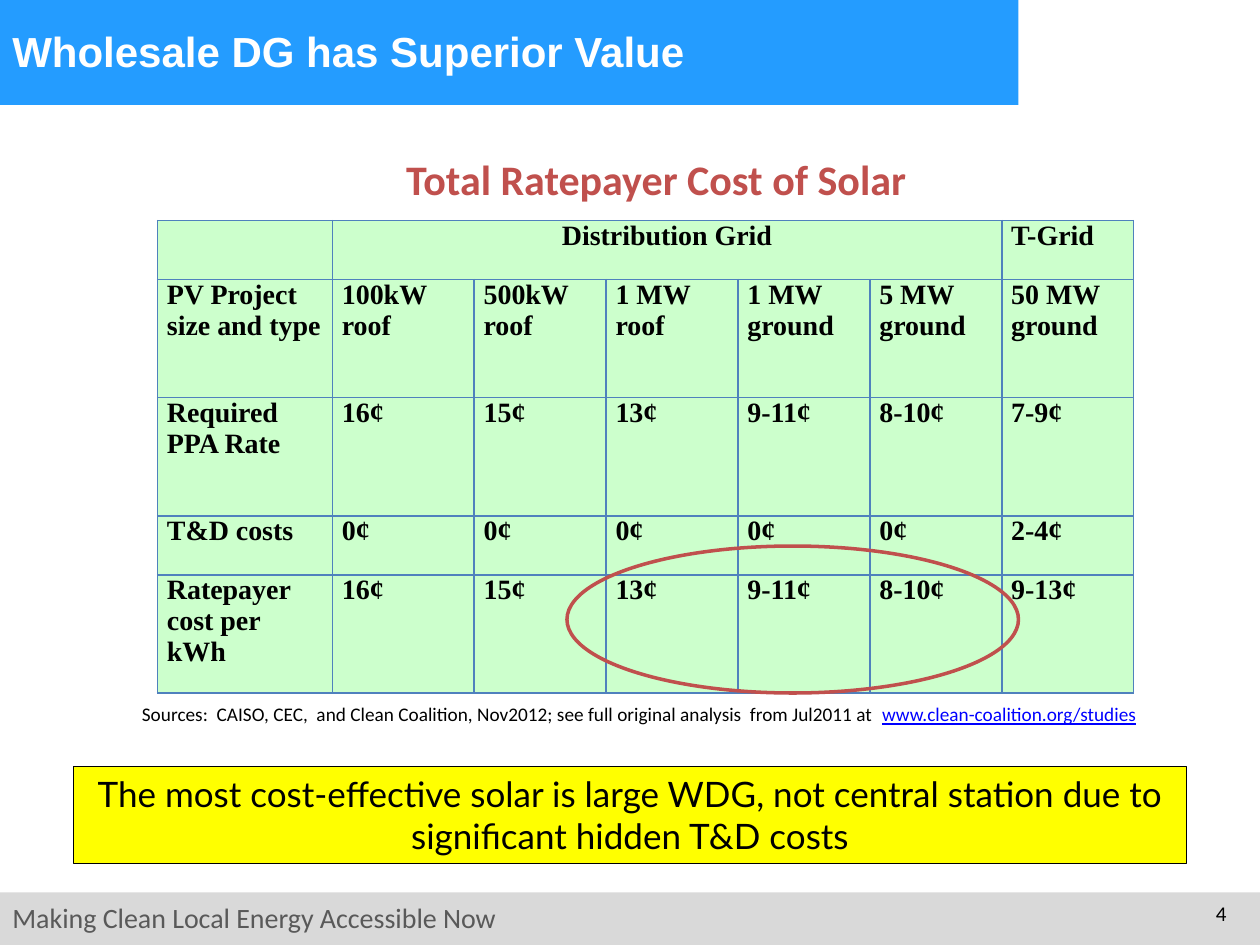
"""Build a slide comparing the total ratepayer cost of solar by project size."""
from dataclasses import dataclass
from typing import NamedTuple, Optional

from lxml.etree import SubElement
from pptx import Presentation
from pptx.dml.color import RGBColor
from pptx.enum.shapes import MSO_SHAPE
from pptx.enum.text import MSO_ANCHOR, PP_ALIGN
from pptx.oxml.ns import qn
from pptx.util import Pt


@dataclass(frozen=True)
class Theme:
    white: str = "FFFFFF"
    black: str = "000000"
    banner: str = "249CFF"
    footer: str = "D9D9D9"
    tagline: str = "595959"
    callout: str = "FFFF00"
    accent: str = "C0504D"
    cell: str = "CCFFCC"
    border: str = "4F81BD"
    link: str = "0000FF"
    heading_size: float = 24
    callout_size: float = 20
    body_size: float = 16
    number_size: float = 12
    source_size: float = 11


class Box(NamedTuple):
    left: float
    top: float
    width: float
    height: float

    def lengths(self) -> list:
        return [Pt(value) for value in self]


class Style(NamedTuple):
    size: float
    color: str
    font: str = "Calibri"
    bold: bool = False
    align: PP_ALIGN = PP_ALIGN.LEFT


class Panel(NamedTuple):
    box: Box
    fill: Optional[str] = None
    line: Optional[str] = None
    weight: float = 0
    outline: MSO_SHAPE = MSO_SHAPE.RECTANGLE


class Label(NamedTuple):
    box: Box
    text: str
    style: Style
    anchor: MSO_ANCHOR = MSO_ANCHOR.TOP


THEME = Theme()
CELL_STYLE = Style(THEME.body_size, THEME.black, "Times New Roman", True)
SOURCE_STYLE = Style(THEME.source_size, THEME.black)
CALLOUT_STYLE = Style(THEME.callout_size, THEME.black, "Lato", align=PP_ALIGN.CENTER)

FOOTER = Panel(Box(0, 510, 720, 30), THEME.footer)
BANNER = Panel(Box(0, 0, 582, 60), THEME.banner)
CALLOUT = Panel(Box(42, 438, 636, 55.4), THEME.callout, THEME.black, 0.75)
HIGHLIGHT = Panel(Box(324, 312, 258, 84), None, THEME.accent, 2, MSO_SHAPE.OVAL)

LABELS = [
    Label(Box(0, 511.2, 372, 26.6), "Making Clean Local Energy Accessible Now",
          Style(THEME.body_size, THEME.tagline)),
    Label(Box(672, 511.2, 36, 28.8), "4",
          Style(THEME.number_size, THEME.black, align=PP_ALIGN.RIGHT)),
    Label(Box(0, 6, 504, 46), "Wholesale DG has Superior Value",
          Style(THEME.heading_size, THEME.white, "Arial", True), MSO_ANCHOR.MIDDLE),
    Label(Box(198, 84, 354, 36.4), "Total Ratepayer Cost of Solar",
          Style(THEME.heading_size, THEME.accent, bold=True, align=PP_ALIGN.CENTER)),
]
CALLOUT_TEXT = ("The most cost-effective solar is large WDG, not central station "
                "due to significant hidden T&D costs")
SOURCES_BOX = Box(74, 398, 632, 34)
SOURCES = ("Sources:  CAISO, CEC,  and Clean Coalition, Nov2012; "
           "see full original analysis  from Jul2011 at  ")
STUDIES = "www.clean-coalition.org/studies"

COST_BOX = Box(90, 126, 558, 270)
COST_COLUMNS = [100, 81] + [75.4] * 5
COST_ROWS = [33.75, 67.5, 67.5, 33.75, 67.5]
COSTS = [
    ["", "Distribution Grid", "", "", "", "", "T-Grid"],
    ["PV Project size and type", "100kW roof", "500kW roof", "1 MW roof",
     "1 MW ground", "5 MW ground", "50 MW ground"],
    ["Required PPA Rate", "16¢", "15¢", "13¢", "9-11¢", "8-10¢", "7-9¢"],
    ["T&D costs", "0¢", "0¢", "0¢", "0¢", "0¢", "2-4¢"],
    ["Ratepayer cost per kWh", "16¢", "15¢", "13¢", "9-11¢", "8-10¢", "9-13¢"],
]


def rgb(color: str) -> RGBColor:
    return RGBColor.from_string(color)


def format_paragraph(paragraph, style: Style) -> None:
    paragraph.alignment = style.align
    for run in paragraph.runs:
        run.font.name = style.font
        run.font.size = Pt(style.size)
        run.font.bold = style.bold
        run.font.color.rgb = rgb(style.color)


def write(frame, text: str, style: Style):
    frame.word_wrap = True
    frame.text = text
    format_paragraph(frame.paragraphs[0], style)
    return frame.paragraphs[0]


def draw_panel(slide, panel: Panel):
    shape = slide.shapes.add_shape(panel.outline, *panel.box.lengths())
    shape.shadow.inherit = False
    if panel.fill:
        shape.fill.solid()
        shape.fill.fore_color.rgb = rgb(panel.fill)
    else:
        shape.fill.background()
    if panel.line:
        shape.line.color.rgb = rgb(panel.line)
        shape.line.width = Pt(panel.weight)
    else:
        shape.line.fill.background()
    return shape


def draw_label(slide, label: Label):
    frame = slide.shapes.add_textbox(*label.box.lengths()).text_frame
    frame.vertical_anchor = label.anchor
    return write(frame, label.text, label.style)


def border_cell(cell) -> None:
    properties = cell._tc.get_or_add_tcPr()
    for position, side in enumerate(("a:lnL", "a:lnR", "a:lnT", "a:lnB")):
        line = SubElement(properties, qn(side), w=str(Pt(1)))
        fill = SubElement(line, qn("a:solidFill"))
        SubElement(fill, qn("a:srgbClr"), val=THEME.border)
        properties.insert(position, line)


def draw_costs(slide) -> None:
    frame = slide.shapes.add_table(len(COST_ROWS), len(COST_COLUMNS), *COST_BOX.lengths())
    costs = frame.table
    for column, width in zip(costs.columns, COST_COLUMNS):
        column.width = Pt(width)
    for row, height, texts in zip(costs.rows, COST_ROWS, COSTS):
        row.height = Pt(height)
        for cell, text in zip(row.cells, texts):
            cell.margin_left = cell.margin_right = Pt(5.4)
            cell.margin_top = cell.margin_bottom = Pt(0)
            cell.fill.solid()
            cell.fill.fore_color.rgb = rgb(THEME.cell)
            border_cell(cell)
            write(cell.text_frame, text, CELL_STYLE)
    grid_heading = costs.cell(0, 1)
    grid_heading.merge(costs.cell(0, 5))
    grid_heading.text_frame.paragraphs[0].alignment = PP_ALIGN.CENTER


def draw_sources(slide) -> None:
    sources = draw_label(slide, Label(SOURCES_BOX, SOURCES, SOURCE_STYLE))
    studies = sources.add_run()
    studies.text = STUDIES
    format_paragraph(sources, SOURCE_STYLE)
    studies.font.color.rgb = rgb(THEME.link)
    studies.font.underline = True


def main() -> None:
    deck = Presentation()
    deck.slide_width, deck.slide_height = Pt(720), Pt(540)
    slide = deck.slides.add_slide(deck.slide_layouts[6])
    draw_panel(slide, FOOTER)
    draw_panel(slide, BANNER)
    write(draw_panel(slide, CALLOUT).text_frame, CALLOUT_TEXT, CALLOUT_STYLE)
    draw_costs(slide)
    draw_sources(slide)
    for label in LABELS:
        draw_label(slide, label)
    draw_panel(slide, HIGHLIGHT)
    deck.save("out.pptx")


if __name__ == "__main__":
    main()
